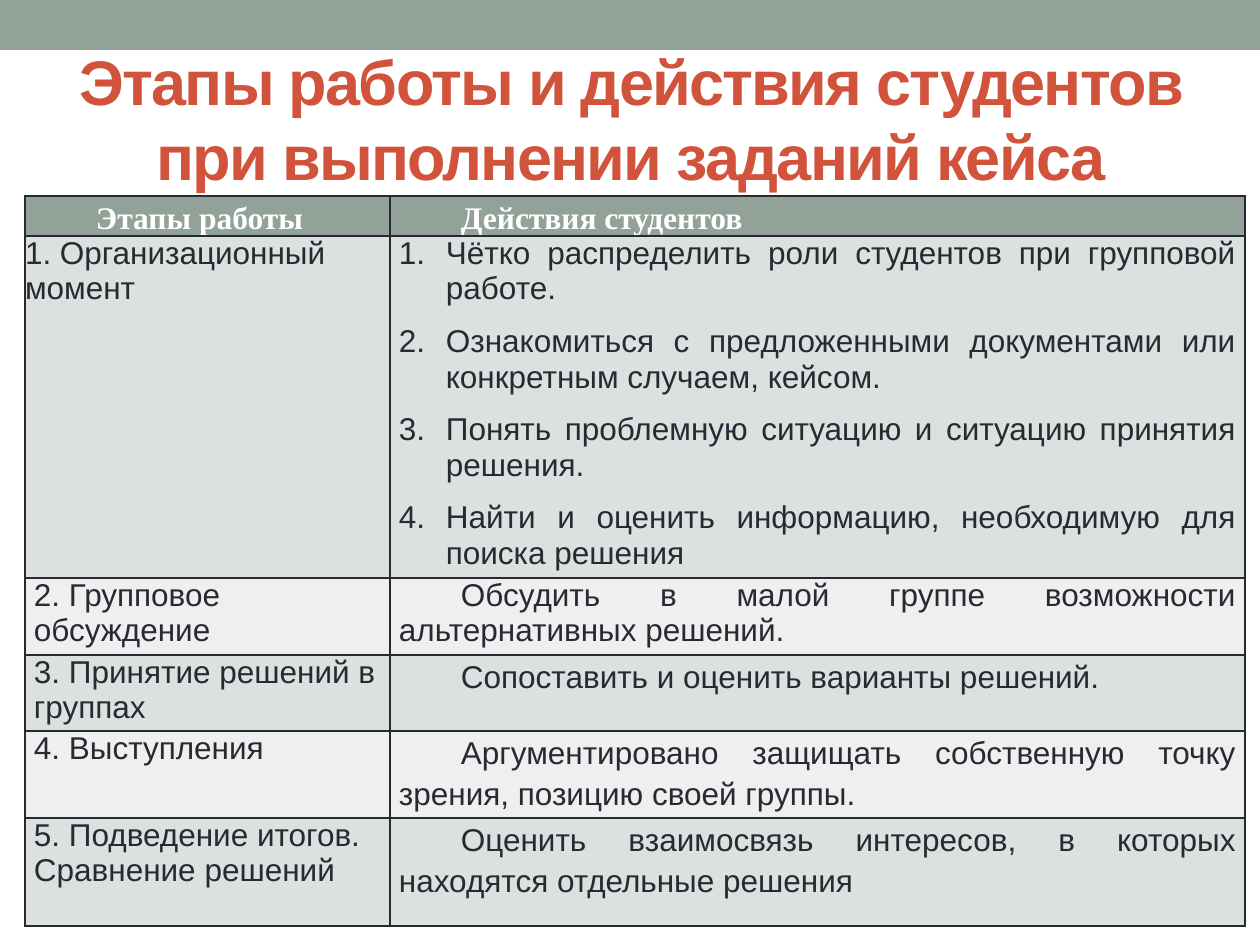
from lxml import etree
from pptx import Presentation
from pptx.dml.color import RGBColor
from pptx.enum.shapes import MSO_SHAPE
from pptx.enum.text import MSO_ANCHOR, MSO_AUTO_SIZE, PP_ALIGN
from pptx.oxml.ns import qn
from pptx.util import Pt

RECT = MSO_SHAPE.RECTANGLE
MIDDLE = MSO_ANCHOR.MIDDLE
TOP = MSO_ANCHOR.TOP
FIXED = MSO_AUTO_SIZE.NONE
LEFT, CENTER, JUST = PP_ALIGN.LEFT, PP_ALIGN.CENTER, PP_ALIGN.JUSTIFY
SCALE = 914400 / 126

COLORS = {"sage": "93A299", "title": "D2533C", "ink": "292934",
          "white": "FFFFFF", "odd": "DCE0DE", "even": "EEF0EF"}

FONTS = {
    "title": {"name": "Arial", "size": Pt(36), "bold": True},
    "head": {"name": "Times New Roman", "size": Pt(18), "bold": True},
    "body": {"name": "Arial", "size": Pt(18), "bold": False},
}

PARAS = {
    "stage": {"alignment": LEFT},
    "list": {"alignment": JUST, "space_after": Pt(10)},
    "tight": {"alignment": JUST, "space_after": Pt(10)},
    "loose": {"alignment": JUST, "space_after": Pt(10), "line_spacing": 1.15},
}
INDENTS = {"list": (47, -47), "tight": (0, 62), "loose": (0, 62)}

TITLE = "Этапы работы и действия студентов при выполнении заданий кейса"
HEADS = ["Этапы работы", "Действия студентов"]
STAGES = [
    (["1. Организационный момент"], "list", [
        "Чётко распределить роли студентов при групповой работе.",
        "Ознакомиться с предложенными документами или конкретным случаем, кейсом.",
        "Понять проблемную ситуацию и ситуацию принятия решения.",
        "Найти и оценить информацию, необходимую для поиска решения"]),
    (["2. Групповое обсуждение"], "tight",
     ["Обсудить в малой группе возможности альтернативных решений."]),
    (["3. Принятие решений в группах"], "loose",
     ["Сопоставить и оценить варианты решений."]),
    (["4. Выступления"], "loose",
     ["Аргументировано защищать собственную точку зрения, позицию своей группы."]),
    (["5. Подведение итогов.", "Сравнение решений"], "loose",
     ["Оценить взаимосвязь интересов, в которых находятся отдельные решения"]),
]
COLS = [365, 855]
ROWS = [40, 342, 77, 76, 87, 108]


def px(num):
    """Turn px into EMU."""
    return round(num * SCALE)


def rgb(name):
    """Look up a colour by name."""
    return RGBColor.from_string(COLORS[name])


def style(item, values):
    """Set each attribute from a dict of format values."""
    for key, value in values.items():
        setattr(item, key, value)


def write(frame, lines, font, color, para):
    """Fill a text frame with formatted paragraphs."""
    for num, line in enumerate(lines):
        part = frame.add_paragraph() if num else frame.paragraphs[0]
        run = part.add_run()
        run.text = line
        style(run.font, FONTS[font])
        run.font.color.rgb = rgb(color)
        style(part, PARAS[para])
        if para in INDENTS:
            props = part._p.get_or_add_pPr()
            margin, indent = INDENTS[para]
            props.set("marL", str(px(margin)))
            props.set("indent", str(px(indent)))
            if para == "list":
                etree.SubElement(props, qn("a:buFont"), typeface="+mj-lt")
                etree.SubElement(props, qn("a:buAutoNum"), type="arabicPeriod")


def border(cell):
    """Draw a thin line on all four sides of a cell."""
    props = cell._tc.get_or_add_tcPr()
    for num, side in enumerate(("lnL", "lnR", "lnT", "lnB")):
        line = etree.Element(qn("a:" + side), w=str(Pt(1)))
        fill = etree.SubElement(line, qn("a:solidFill"))
        etree.SubElement(fill, qn("a:srgbClr"), val=COLORS["ink"])
        props.insert(num, line)


def add_band(slide, left, top, width, height):
    """Place the plain band at the top of the slide."""
    band = slide.shapes.add_shape(RECT, *map(px, (left, top, width, height)))
    band.shadow.inherit = False
    band.fill.solid()
    band.fill.fore_color.rgb = rgb("sage")
    band.line.fill.background()


def add_title(slide, left, top, width, height):
    """Place the heading in the title placeholder."""
    title = slide.shapes.title
    style(title, {"left": px(left), "top": px(top),
                  "width": px(width), "height": px(height)})
    frame = title.text_frame
    style(frame, {"word_wrap": True, "auto_size": FIXED,
                  "vertical_anchor": MIDDLE})
    write(frame, [TITLE], "title", "title", "stage")
    part = frame.paragraphs[0]
    part.alignment = CENTER
    part.runs[0].font._element.set("spc", "-100")


def add_stages(slide, left, top):
    """Place the table of stages and student actions."""
    box = map(px, (left, top, sum(COLS), sum(ROWS)))
    table = slide.shapes.add_table(len(ROWS), len(COLS), *box).table
    for col, width in zip(table.columns, COLS):
        col.width = px(width)
    for row, height in zip(table.rows, ROWS):
        row.height = px(height)
    for col, head in enumerate(HEADS):
        write(table.cell(0, col).text_frame, [head], "head", "white", "loose")
    for row, (stage, para, acts) in enumerate(STAGES, 1):
        write(table.cell(row, 0).text_frame, stage, "body", "ink", "stage")
        write(table.cell(row, 1).text_frame, acts, "body", "ink", para)
    for row in range(len(ROWS)):
        tint = ("odd" if row % 2 else "even") if row else "sage"
        for col in range(len(COLS)):
            cell = table.cell(row, col)
            side = 0 if (row, col) == (1, 0) else px(9)
            style(cell, {"margin_left": side, "margin_right": side,
                         "margin_top": 0, "margin_bottom": 0,
                         "vertical_anchor": TOP})
            cell.fill.solid()
            cell.fill.fore_color.rgb = rgb(tint)
            border(cell)


def main():
    """Build the slide and save it."""
    deck = Presentation()
    style(deck, {"slide_width": px(1260), "slide_height": px(945)})
    slide = deck.slides.add_slide(deck.slide_layouts[5])
    add_band(slide, 0, 0, 1260, 50)
    add_title(slide, 64, 45, 1134, 146)
    add_stages(slide, 25, 196)
    deck.save("out.pptx")


if __name__ == "__main__":
    main()
